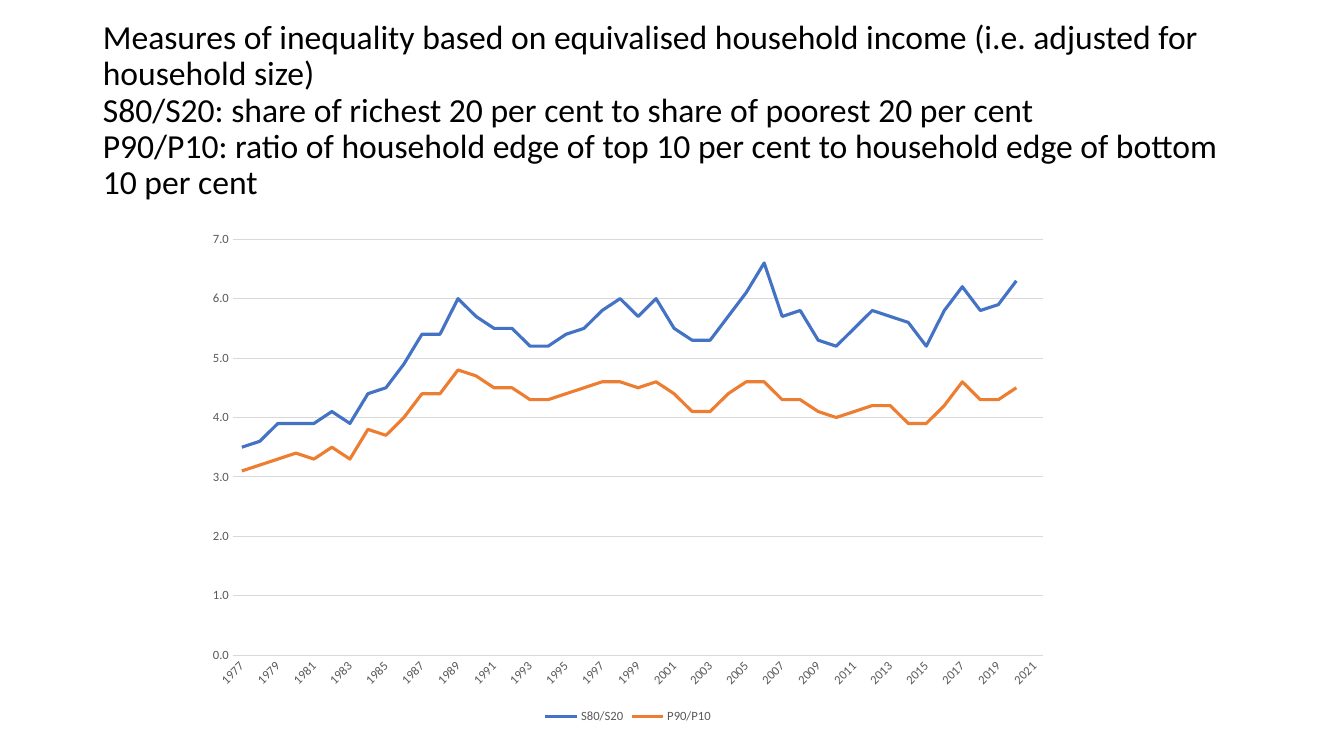
from dataclasses import dataclass

import pptx
import pptx.chart.data
import pptx.dml.color
import pptx.enum.chart
import pptx.enum.text
import pptx.util
from lxml import etree
from pptx.util import Inches

RGB = pptx.dml.color.RGBColor.from_string
Pt = pptx.util.Pt


@dataclass(frozen=True)
class Theme:
    font: str = "Calibri"
    ink: str = "000000"
    label: str = "595959"
    rule: str = "D9D9D9"
    lines: tuple = ("4472C4", "ED7D31")
    title_size: int = 24
    chart_size: int = 10
    label_size: int = 9
    rule_width: float = 0.75
    line_width: float = 2.25


theme = Theme()


def set_font(font, size, color):
    values = {"name": theme.font, "size": Pt(size), "bold": False}
    for name, value in values.items():
        setattr(font, name, value)
    font.color.rgb = RGB(color)


def set_line(line, color, width):
    line.color.rgb = RGB(color)
    line.width = Pt(width)


prs = pptx.Presentation()
prs.slide_width, prs.slide_height = Inches(13.33), Inches(7.5)
s = prs.slides.add_slide(prs.slide_layouts.get_by_name("Title Only"))

# Title
title = s.shapes.title
title.left, title.top = Inches(0.92), Inches(0.38)
title.width, title.height = Inches(11.5), Inches(1.45)
tf = title.text_frame
frame_format = {
    "word_wrap": True,
    "auto_size": pptx.enum.text.MSO_AUTO_SIZE.NONE,
    "vertical_anchor": pptx.enum.text.MSO_ANCHOR.MIDDLE,
}
for name, value in frame_format.items():
    setattr(tf, name, value)
p = tf.paragraphs[0]
p.text = "\v".join([
    "Measures of inequality based on equivalised household income (i.e. adjusted for household size)",
    "S80/S20: share of richest 20 per cent to share of poorest 20 per cent",
    "P90/P10: ratio of household edge of top 10 per cent to household edge of bottom 10 per cent",
])
p.alignment = pptx.enum.text.PP_ALIGN.LEFT
p.line_spacing = 0.9
for r in p.runs:
    set_font(r.font, theme.title_size, theme.ink)

# Inequality ratios by year; 2021 has no value yet
ratios = {
    "S80/S20": [
        3.5, 3.6, 3.9, 3.9, 3.9, 4.1, 3.9, 4.4, 4.5, 4.9, 5.4,
        5.4, 6, 5.7, 5.5, 5.5, 5.2, 5.2, 5.4, 5.5, 5.8, 6,
        5.7, 6, 5.5, 5.3, 5.3, 5.7, 6.1, 6.6, 5.7, 5.8, 5.3,
        5.2, 5.5, 5.8, 5.7, 5.6, 5.2, 5.8, 6.2, 5.8, 5.9, 6.3,
    ],
    "P90/P10": [
        3.1, 3.2, 3.3, 3.4, 3.3, 3.5, 3.3, 3.8, 3.7, 4, 4.4,
        4.4, 4.8, 4.7, 4.5, 4.5, 4.3, 4.3, 4.4, 4.5, 4.6, 4.6,
        4.5, 4.6, 4.4, 4.1, 4.1, 4.4, 4.6, 4.6, 4.3, 4.3, 4.1,
        4, 4.1, 4.2, 4.2, 3.9, 3.9, 4.2, 4.6, 4.3, 4.3, 4.5,
    ],
}
data = pptx.chart.data.CategoryChartData(number_format="0.0")
data.categories = [str(year) for year in range(1977, 2022)]
for name, values in ratios.items():
    data.add_series(name, values + [None])

chart = s.shapes.add_chart(
    pptx.enum.chart.XL_CHART_TYPE.LINE,
    Inches(1.94), Inches(2.2), Inches(8.58), Inches(5.02), data,
).chart
set_font(chart.font, theme.chart_size, theme.ink)
chart.has_title = False
chart.has_legend = True
chart.legend.position = pptx.enum.chart.XL_LEGEND_POSITION.BOTTOM
chart.legend.include_in_layout = False
set_font(chart.legend.font, theme.label_size, theme.label)

chart.plots[0].vary_by_categories = False
for series, color in zip(chart.plots[0].series, theme.lines):
    series.smooth = False
    series.marker.style = pptx.enum.chart.XL_MARKER_STYLE.NONE
    set_line(series.format.line, color, theme.line_width)

# Axes
years, ratio_axis = chart.category_axis, chart.value_axis
for axis in (years, ratio_axis):
    axis.major_tick_mark = pptx.enum.chart.XL_TICK_MARK.NONE
    axis.minor_tick_mark = pptx.enum.chart.XL_TICK_MARK.NONE
    set_font(axis.tick_labels.font, theme.label_size, theme.label)
set_line(years.format.line, theme.rule, theme.rule_width)
ratio_axis.format.line.fill.background()
set_line(ratio_axis.major_gridlines.format.line, theme.rule, theme.rule_width)
scale = {"minimum_scale": 0, "maximum_scale": 7, "major_unit": 1}
for name, value in scale.items():
    setattr(ratio_axis, name, value)
ratio_axis.tick_labels.number_format = "0.0"
ratio_axis.tick_labels.number_format_is_linked = False

# Every second year, slanted by 45 degrees
cat_ax = years._element
ns = cat_ax.nsmap
cat_ax.find("c:txPr/a:bodyPr", ns).set("rot", str(-45 * 60000))
skip = etree.Element(f"{{{ns['c']}}}tickLblSkip", val="2")
cat_ax.find("c:noMultiLvlLbl", ns).addprevious(skip)

prs.save("out.pptx")
